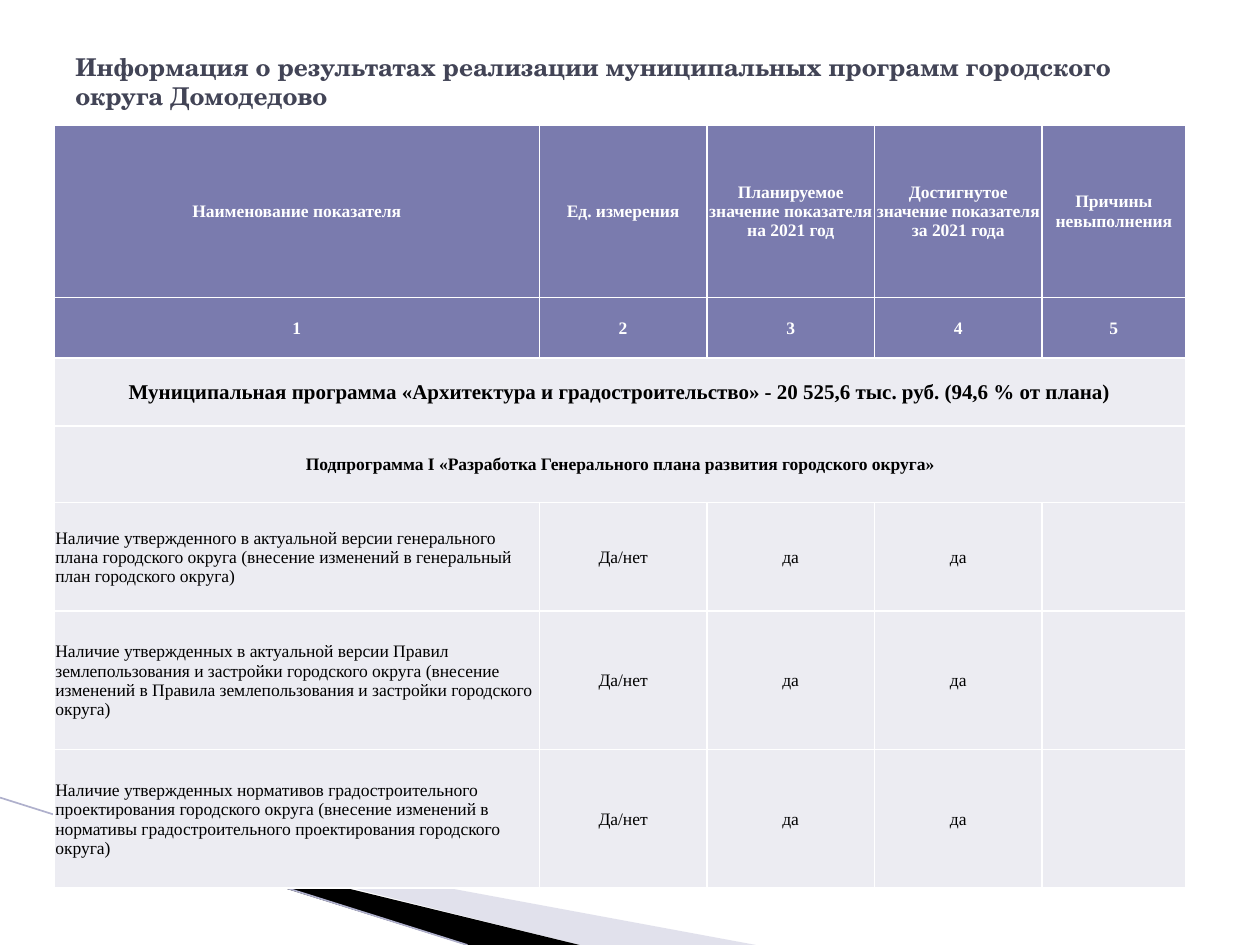
"""Build a slide with a table of municipal programme results."""
from lxml import etree
from pptx import Presentation
from pptx.dml.color import RGBColor
from pptx.enum.shapes import MSO_CONNECTOR
from pptx.enum.text import MSO_ANCHOR, PP_ALIGN
from pptx.oxml import parse_xml
from pptx.oxml.ns import nsdecls, qn
from pptx.util import Inches, Pt

MIDDLE = MSO_ANCHOR.MIDDLE
LEFT, CENTER = PP_ALIGN.LEFT, PP_ALIGN.CENTER
STRAIGHT = MSO_CONNECTOR.STRAIGHT
WHITE = RGBColor(0xFF, 0xFF, 0xFF)
BLACK = RGBColor(0, 0, 0)
SLATE = RGBColor(0x42, 0x44, 0x56)
VIOLET = RGBColor(0x7A, 0x7B, 0xAE)
PALE = RGBColor(0xEC, 0xEC, 0xF2)
LILAC = RGBColor(0xB6, 0xB6, 0xD1)
MAUVE = RGBColor(0xAF, 0xB0, 0xCC)
SERIF = "Times New Roman"
UNIT = Inches(0.1)


def grid(*counts):
    return [round(count * UNIT) for count in counts]


def write(frame, text, align, font):
    frame.word_wrap = True
    line = frame.paragraphs[0]
    line.alignment = align
    run = line.add_run()
    run.text = text
    color = font["color"]
    run.font.color.rgb = color
    for name in ("name", "size", "bold"):
        setattr(run.font, name, font[name])


deck = Presentation()
deck.slide_width, deck.slide_height = grid(100, 75)
slide = deck.slides.add_slide(deck.slide_layouts[6])
shapes = slide.shapes

WEDGES = [
    (LILAC, 40, [(5.5, 65), (59.5, 75), (45.6, 75)]),
    (BLACK, 100, [(5.3, 64.9), (45.7, 75), (37.2, 75)]),
]
for color, alpha, points in WEDGES:
    path = shapes.build_freeform(*points[0], scale=UNIT)
    path.add_line_segments(points[1:], close=True)
    wedge = path.convert_to_shape()
    wedge.shadow.inherit = False
    wedge.fill.solid()
    wedge.fill.fore_color.rgb = color
    wedge.line.fill.background()
    if alpha < 100:
        tint = wedge.fill._xPr.find(qn("a:solidFill"))[0]
        etree.SubElement(tint, qn("a:alpha")).set("val", str(alpha * 1000))

edge = shapes.add_connector(STRAIGHT, *grid(0, 63.3, 37.1, 75))
edge.line.color.rgb = MAUVE
edge.line.width = Pt(0.95)
etree.SubElement(edge._element.spPr, qn("a:effectLst"))

title = shapes.add_textbox(*grid(5, 3, 90, 6.9)).text_frame
title.vertical_anchor = MIDDLE
write(title,
      "Информация о результатах реализации муниципальных программ городского округа Домодедово",
      LEFT, {"name": "TeX Gyre Schola", "size": Pt(14), "bold": True, "color": SLATE})

COLS = [38.5, 13.3, 13.3, 13.3, 11.4]
ROWS = [13.7, 4.8, 5.4, 6.1, 8.6, 11, 11]
MARKS = ["Да/нет", "да", "да", ""]
TEXTS = [
    ["Наименование показателя", "Ед. измерения",
     "Планируемое значение показателя на 2021 год",
     "Достигнутое значение показателя за 2021 года", "Причины невыполнения"],
    ["1", "2", "3", "4", "5"],
    ["Муниципальная программа «Архитектура и градостроительство» - "
     "20 525,6 тыс. руб. (94,6 % от плана)"],
    ["Подпрограмма I «Разработка Генерального плана развития городского округа»"],
    ["Наличие утвержденного в актуальной версии генерального плана городского округа "
     "(внесение изменений в генеральный план городского округа)", *MARKS],
    ["Наличие утвержденных в актуальной версии Правил землепользования и застройки "
     "городского округа (внесение изменений в Правила землепользования и застройки "
     "городского округа)", *MARKS],
    ["Наличие утвержденных нормативов градостроительного проектирования городского округа "
     "(внесение изменений в нормативы градостроительного проектирования городского округа)",
     *MARKS],
]
HEAD, BANDS, BANNER = 2, 4, 2
INSETS = {"margin_left": Inches(0.01), "margin_right": Inches(0.01),
          "margin_top": Inches(0.01), "margin_bottom": 0, "vertical_anchor": MIDDLE}

table = shapes.add_table(len(ROWS), len(COLS),
                         *grid(4.3, 9.9, sum(COLS), sum(ROWS))).table
for col, width in zip(table.columns, grid(*COLS)):
    col.width = width
for row, height in zip(table.rows, grid(*ROWS)):
    row.height = height

for r, texts in enumerate(TEXTS):
    font = {"name": SERIF, "size": Pt(12 if r == BANNER else 10),
            "bold": r < BANDS, "color": WHITE if r < HEAD else BLACK}
    if len(texts) == 1:
        table.cell(r, 0).merge(table.cell(r, len(COLS) - 1))
    for c in range(len(COLS)):
        cell = table.cell(r, c)
        for name, value in INSETS.items():
            setattr(cell, name, value)
        for side in ("lnL", "lnR", "lnT", "lnB"):
            cell._tc.get_or_add_tcPr().append(parse_xml(
                f'<a:{side} {nsdecls("a")} w="{Pt(1)}"><a:solidFill>'
                f'<a:srgbClr val="{WHITE}"/></a:solidFill></a:{side}>'))
        cell.fill.solid()
        cell.fill.fore_color.rgb = VIOLET if r < HEAD else PALE
        if c < len(texts) and texts[c]:
            align = LEFT if r >= BANDS and c == 0 else CENTER
            write(cell.text_frame, texts[c], align, font)

deck.save("out.pptx")
